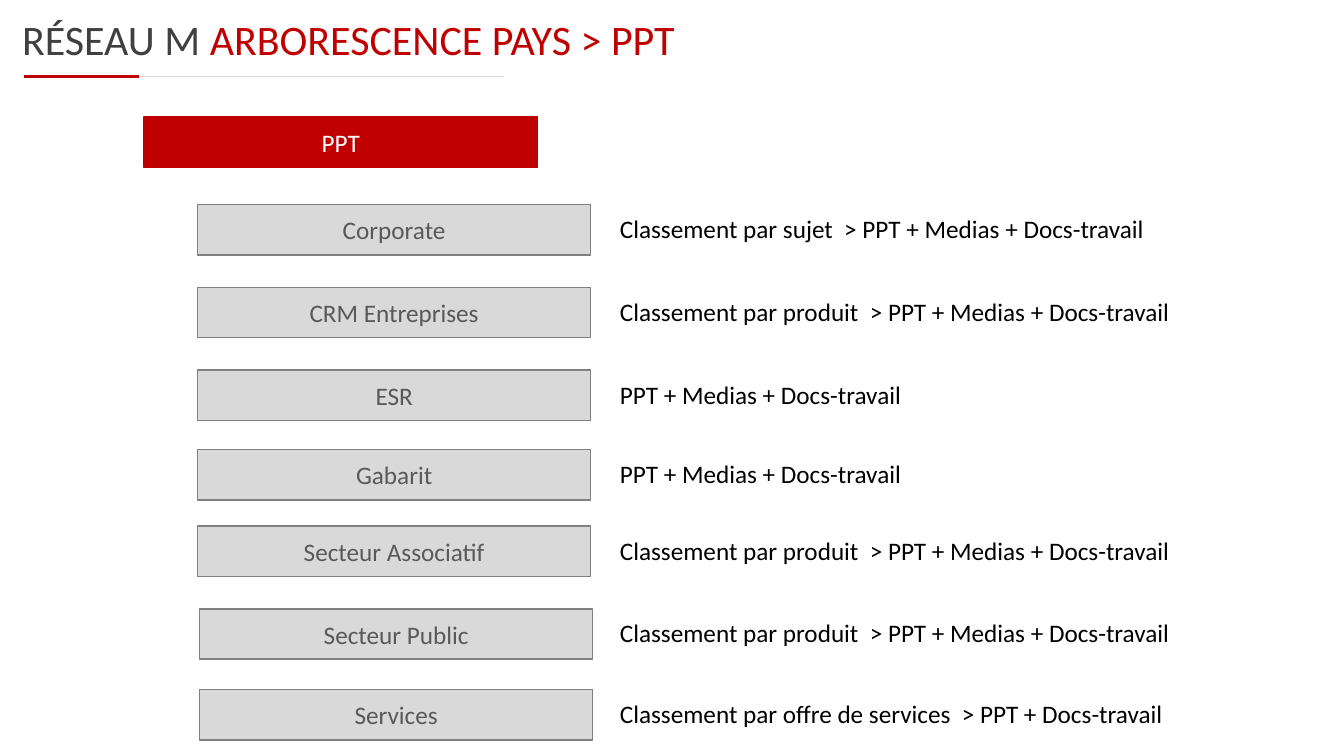
import dataclasses
import typing

import pptx
import pptx.dml.color
import pptx.enum.shapes
import pptx.enum.text
import pptx.oxml.ns
import pptx.oxml.xmlchemy
import pptx.shapes.base
import pptx.slide
import pptx.text.text
import pptx.util
import lxml.etree

RGB = pptx.dml.color.RGBColor
RED = RGB(0xC0, 0x00, 0x00)
WHITE = RGB(0xFF, 0xFF, 0xFF)
BLACK = RGB(0x00, 0x00, 0x00)
DARK = RGB(0x40, 0x40, 0x40)
SLATE = RGB(0x59, 0x59, 0x59)
GREY = RGB(0x80, 0x80, 0x80)
PALE = RGB(0xD9, 0xD9, 0xD9)

# The grid has square cells, ten to the inch.
CELL = 0.1
COLS, ROWS = 133.3, 75
WIDE, HIGH = 39, 5
NOTE_COL, NOTE_WIDE, NOTE_HIGH = 60.5, 67.3, 4
NOTE_DROP = 0.4
FILES = "PPT + Medias + Docs-travail"
GOODS = f"Classement par produit  > {FILES}"


@dataclasses.dataclass(frozen=True)
class Box:
    label: str
    col: float
    row: float
    fill: RGB = PALE
    edge: RGB = GREY
    ink: RGB = SLATE
    note: str = ""


@dataclasses.dataclass(frozen=True)
class Rule:
    start: float
    end: float
    tint: RGB
    weight: float


BOXES = (
    Box("PPT", 14.3, 11.6, RED, RED, WHITE),
    Box("Corporate", 19.6, 20.3, note=f"Classement par sujet  > {FILES}"),
    Box("CRM Entreprises", 19.6, 28.5, note=GOODS),
    Box("ESR", 19.6, 36.7, note=FILES),
    Box("Gabarit", 19.6, 44.6, note=FILES),
    Box("Secteur Associatif", 19.6, 52.2, note=GOODS),
    Box("Secteur Public", 19.8, 60.4, note=GOODS),
    Box("Services", 19.8, 68.4,
        note="Classement par offre de services  > PPT + Docs-travail"),
)
RULES = (Rule(13.8, 50, PALE, 0.25), Rule(2.4, 13.8, RED, 2.5))
RULE_ROW = 7.6
TITLE = (("RÉSEAU M ", DARK), ("ARBORESCENCE PAYS > PPT", RED))


def span(*cells: float) -> list[pptx.util.Emu]:
    """Turn counts of grid cells into lengths."""
    return [pptx.util.Inches(count * CELL) for count in cells]


def apply(target: typing.Any, style: dict[str, typing.Any]) -> None:
    for name, value in style.items():
        setattr(target, name, value)


def write(line: pptx.text.text._Paragraph, text: str, ink: RGB, size: float = 18) -> None:
    run = line.add_run()
    run.text = text
    apply(run.font, {"name": "Calibri", "size": pptx.util.Pt(size)})
    run.font.color.rgb = ink


def add_rule(slide: pptx.slide.Slide, rule: Rule) -> None:
    line = slide.shapes.add_connector(
        pptx.enum.shapes.MSO_CONNECTOR.STRAIGHT,
        *span(rule.start, RULE_ROW, rule.end, RULE_ROW))
    line.line.color.rgb = rule.tint
    line.line.width = pptx.util.Pt(rule.weight)
    lxml.etree.SubElement(line._element.spPr, pptx.oxml.ns.qn("a:effectLst"))


def add_box(slide: pptx.slide.Slide, box: Box) -> None:
    shape = slide.shapes.add_shape(
        pptx.enum.shapes.MSO_SHAPE.RECTANGLE,
        *span(box.col, box.row, WIDE, HIGH))
    shape.shadow.inherit = False
    shape.fill.solid()
    shape.fill.fore_color.rgb = box.fill
    shape.line.color.rgb = box.edge
    shape.line.width = pptx.util.Pt(1)
    frame = shape.text_frame
    frame.vertical_anchor = pptx.enum.text.MSO_ANCHOR.MIDDLE
    line = frame.paragraphs[0]
    line.alignment = pptx.enum.text.PP_ALIGN.CENTER
    write(line, box.label, box.ink)


def add_text(slide: pptx.slide.Slide, place: tuple[float, ...],
             grow: bool = False) -> pptx.text.text._Paragraph:
    """Add a wrapping text box and return its first paragraph."""
    frame = slide.shapes.add_textbox(*span(*place)).text_frame
    fit = pptx.enum.text.MSO_AUTO_SIZE
    apply(frame, {"word_wrap": True,
                  "auto_size": fit.SHAPE_TO_FIT_TEXT if grow else fit.NONE})
    return frame.paragraphs[0]


def main() -> None:
    deck = pptx.Presentation()
    deck.slide_width, deck.slide_height = span(COLS, ROWS)
    slide = deck.slides.add_slide(deck.slide_layouts[6])
    for rule in RULES:
        add_rule(slide, rule)
    title = add_text(slide, (1.2, 0.9, 127.2, 8.4))
    for text, ink in TITLE:
        write(title, text, ink, 30)
    for box in BOXES:
        add_box(slide, box)
        if box.note:
            place = (NOTE_COL, box.row + NOTE_DROP, NOTE_WIDE, NOTE_HIGH)
            write(add_text(slide, place, grow=True), box.note, BLACK)
    deck.save("out.pptx")


if __name__ == "__main__":
    main()
